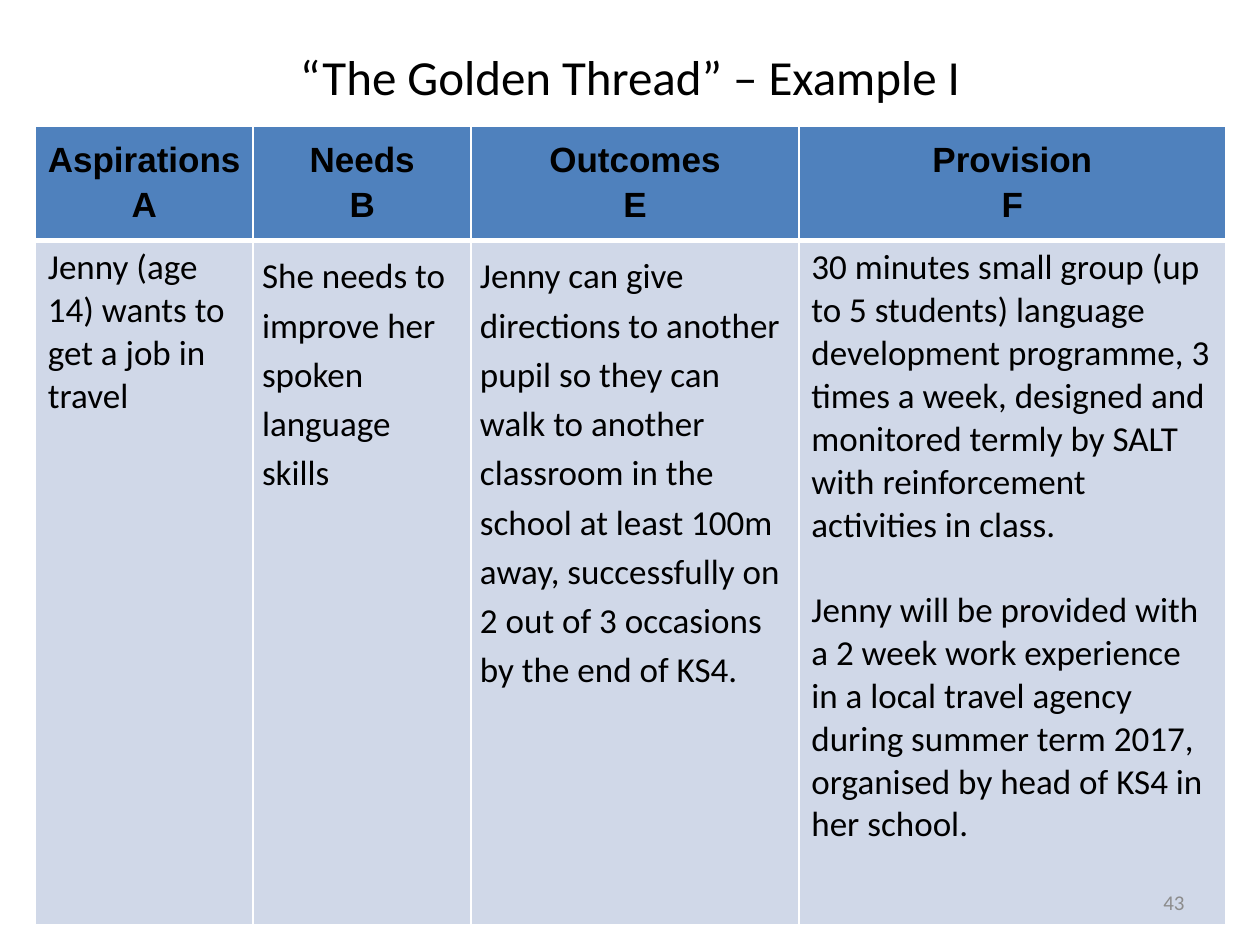
"""Build the "Golden Thread" example slide: a title, a four-column table and a page number."""
from lxml.etree import SubElement
from pptx import Presentation
from pptx.dml.color import RGBColor
from pptx.enum.text import MSO_ANCHOR as Anchor, PP_ALIGN as Align
from pptx.oxml.ns import qn
from pptx.util import Inches, Pt

BLACK = RGBColor(0x00, 0x00, 0x00)
GREY = RGBColor(0x8C, 0x8C, 0x8C)
WHITE = RGBColor(0xFF, 0xFF, 0xFF)
BLUE = RGBColor(0x4F, 0x81, 0xBD)
PALE = RGBColor(0xD0, 0xD8, 0xE8)

WIDTH, HEIGHT = Inches(10), Inches(7.5)
COLUMNS = (1.73, 1.73, 2.6, 3.39)
ROWS = (0.87, 5.43)

TITLE = {"size": Pt(28), "name": "Calibri", "color": BLACK}
NUMBER = {"size": Pt(12), "name": "Calibri", "color": GREY}
HEADER = {"size": Pt(20), "name": "Arial", "color": BLACK, "bold": True}
BODY = {"size": Pt(20), "name": "Calibri", "color": BLACK, "bold": False}

EVEN = {"margin_left": 0.07, "margin_top": 0.07, "margin_right": 0.07, "margin_bottom": 0.07}
WIDE = {"margin_left": 0.1, "margin_top": 0.05, "margin_right": 0.1, "margin_bottom": 0.05}
LOOSE = {"line_spacing": 1.15}
CENTRED = {"alignment": Align.CENTER, **LOOSE}
APART = {"space_before": Pt(24.4)}

HEADINGS = (("Aspirations", "A"), ("Needs", "B"), ("Outcomes", "E"), ("Provision", "F"))
DETAILS = (
    (WIDE, {}, ("Jenny (age 14) wants to get a job in travel",)),
    (EVEN, LOOSE, ("She needs to improve her spoken language skills",)),
    (EVEN, LOOSE, (
        "Jenny can give directions to another pupil so they can walk to another classroom "
        "in the school at least 100m away, successfully on 2 out of 3 occasions by the end of KS4.",
    )),
    (WIDE, APART, (
        "30 minutes small group (up to 5 students) language development programme, 3 times a week, "
        "designed and monitored termly by SALT with reinforcement activities in class.",
        "Jenny will be provided with a 2 week work experience in a local travel agency "
        "during summer term 2017, organised by head of KS4 in her school.",
    )),
)


def write(frame, lines, font, layout):
    """Fill a text frame with one formatted paragraph per line."""
    for index, line in enumerate(lines):
        para = frame.add_paragraph() if index else frame.paragraphs[0]
        for key, value in layout.items():
            if index or key != "space_before":
                setattr(para, key, value)
        span = para.add_run()
        span.text = line
        for key, value in font.items():
            if key == "color":
                span.font.color.rgb = value
            else:
                setattr(span.font, key, value)


def add_text(page, shares, line, font, layout):
    """Add a middle-anchored text box placed by shares of the slide size."""
    left, top, width, height = shares
    box = page.shapes.add_textbox(
        int(left * WIDTH), int(top * HEIGHT), int(width * WIDTH), int(height * HEIGHT))
    box.text_frame.word_wrap = True
    box.text_frame.vertical_anchor = Anchor.MIDDLE
    write(box.text_frame, [line], font, layout)


def add_borders(cell, widths):
    """Draw white borders of the given point widths, ahead of the cell fill."""
    properties = cell._tc.get_or_add_tcPr()
    for side, width in widths.items():
        line = SubElement(properties, qn(f"a:ln{side}"), w=str(Pt(width)))
        fill = SubElement(line, qn("a:solidFill"))
        SubElement(fill, qn("a:srgbClr"), val=str(WHITE))


def fill_cell(cell, margins, lines, font, layout, colour, borders):
    """Give a cell its margins, text, borders and fill."""
    for key, value in margins.items():
        setattr(cell, key, Inches(value))
    write(cell.text_frame, lines, font, layout)
    add_borders(cell, borders)
    cell.fill.solid()
    cell.fill.fore_color.rgb = colour


def add_grid(page):
    """Add the table of headings and details."""
    table = page.shapes.add_table(
        len(ROWS), len(COLUMNS), Inches(0.28), Inches(1),
        Inches(sum(COLUMNS)), Inches(sum(ROWS))).table
    table.horz_banding = False
    for column, width in zip(table.columns, COLUMNS):
        column.width = Inches(width)
    for row, height in zip(table.rows, ROWS):
        row.height = Inches(height)
    for index, (heading, (margins, layout, lines)) in enumerate(zip(HEADINGS, DETAILS)):
        fill_cell(table.cell(0, index), EVEN, heading, HEADER, CENTRED, BLUE,
                  {"L": 1, "R": 1, "T": 1, "B": 3})
        fill_cell(table.cell(1, index), margins, lines, BODY, layout, PALE,
                  {"L": 1, "R": 1, "T": 3, "B": 1})


def main():
    """Build and save the deck."""
    deck = Presentation()
    deck.slide_width, deck.slide_height = WIDTH, HEIGHT
    page = deck.slides.add_slide(deck.slide_layouts[6])
    add_text(page, (0.06, 0.01, 0.88, 0.14), "“The Golden Thread” – Example I",
             TITLE, {"alignment": Align.CENTER})
    add_grid(page)
    add_text(page, (0.72, 0.93, 0.23, 0.05), "43", NUMBER, {"alignment": Align.RIGHT})
    deck.save("out.pptx")


if __name__ == "__main__":
    main()
